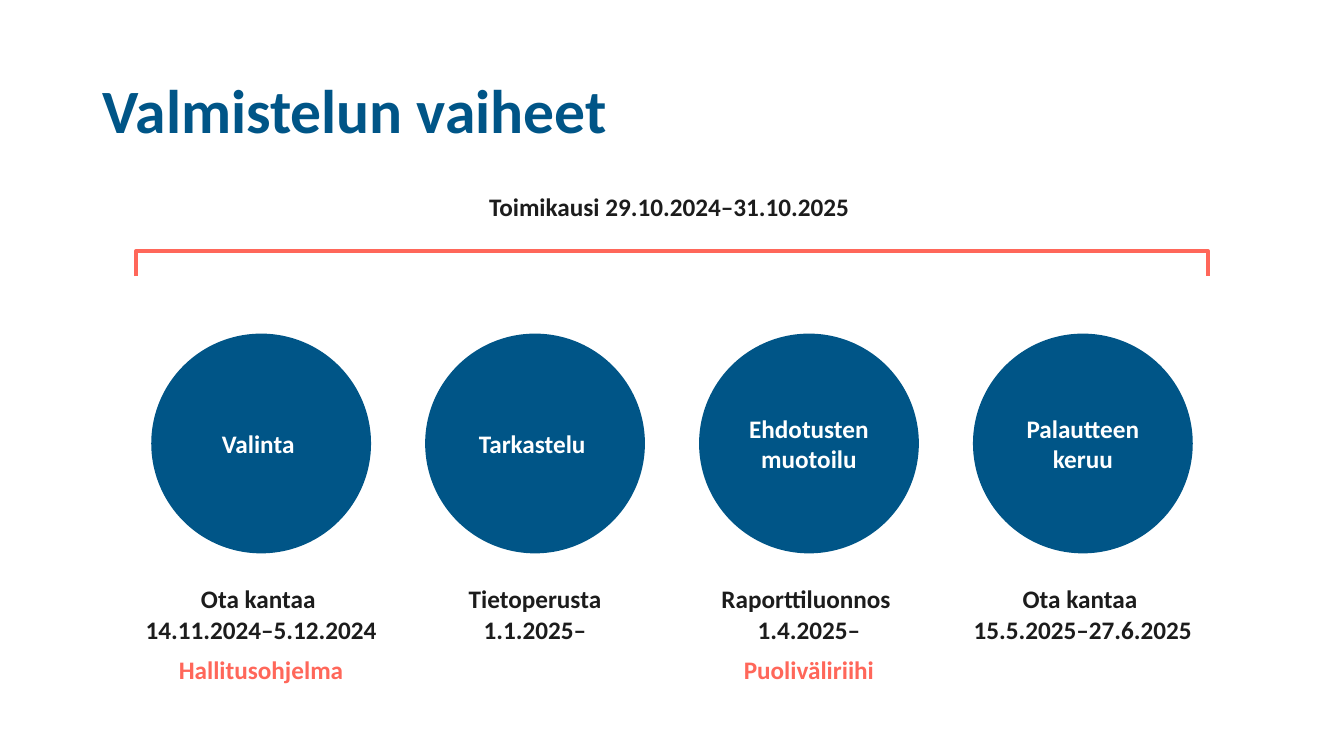
from dataclasses import dataclass

import pptx
import pptx.dml.color
import pptx.enum.shapes
import pptx.enum.text
import pptx.shapes.autoshape
import pptx.slide
import pptx.util

Inches = pptx.util.Inches
RGBColor = pptx.dml.color.RGBColor
Align = pptx.enum.text.PP_ALIGN
Anchor = pptx.enum.text.MSO_ANCHOR

BLUE = RGBColor(0x00, 0x55, 0x87)
CORAL = RGBColor(0xFF, 0x67, 0x5A)
INK = RGBColor(0x1C, 0x1C, 0x1C)
WHITE = RGBColor(0xFF, 0xFF, 0xFF)
FONT = "Calibri"

CIRCLE_LEFT = 1.5
CIRCLE_TOP = 3.31
CIRCLE_SIZE = 2.18
CIRCLE_PITCH = 8.15 / 3
CAPTION_WIDTH = 2.93
CAPTION_TOP = 5.74
MILESTONE_TOP = 6.44


@dataclass(frozen=True)
class Phase:
    name: str
    caption: tuple[str, ...]
    milestone: str = ""


@dataclass(frozen=True)
class Style:
    color: RGBColor
    size: float = 18
    align: Align = Align.CENTER


PHASES = (
    Phase("Valinta ", ("Ota kantaa ", "14.11.2024–5.12.2024"), "Hallitusohjelma"),
    Phase("Tarkastelu ", ("Tietoperusta", "1.1.2025–")),
    Phase("Ehdotusten muotoilu", ("Raporttiluonnos ", "1.4.2025–"), "Puoliväliriihi"),
    Phase("Palautteen keruu", ("Ota kantaa ", "15.5.2025–27.6.2025")),
)


def write(shape: pptx.shapes.autoshape.Shape, lines: tuple[str, ...], style: Style) -> None:
    frame = shape.text_frame
    frame.word_wrap = True
    for number, line in enumerate(lines):
        para = frame.add_paragraph() if number else frame.paragraphs[0]
        para.alignment = style.align
        span = para.add_run()
        span.text = line
        span.font.name = FONT
        span.font.size = pptx.util.Pt(style.size)
        span.font.bold = True
        span.font.color.rgb = style.color


def add_text(
    page: pptx.slide.Slide, left: float, top: float, width: float, height: float,
    lines: tuple[str, ...], style: Style,
) -> pptx.shapes.autoshape.Shape:
    box = page.shapes.add_textbox(Inches(left), Inches(top), Inches(width), Inches(height))
    write(box, lines, style)
    return box


def add_phase(page: pptx.slide.Slide, phase: Phase, left: float) -> None:
    circle = page.shapes.add_shape(
        pptx.enum.shapes.MSO_SHAPE.FLOWCHART_CONNECTOR,
        Inches(left), Inches(CIRCLE_TOP), Inches(CIRCLE_SIZE), Inches(CIRCLE_SIZE),
    )
    circle.shadow.inherit = False
    circle.fill.solid()
    circle.fill.fore_color.rgb = BLUE
    circle.line.fill.background()
    circle.text_frame.vertical_anchor = Anchor.MIDDLE
    write(circle, (phase.name,), Style(WHITE))

    caption_left = left + (CIRCLE_SIZE - CAPTION_WIDTH) / 2
    add_text(page, caption_left, CAPTION_TOP, CAPTION_WIDTH, 0.71, phase.caption, Style(INK))
    if phase.milestone:
        add_text(page, caption_left, MILESTONE_TOP, CAPTION_WIDTH, 0.4,
                 (phase.milestone,), Style(CORAL))


def add_bracket(page: pptx.slide.Slide) -> None:
    left, right, top, bottom = Inches(1.35), Inches(11.98), Inches(2.49), Inches(2.74)
    builder = page.shapes.build_freeform(left, bottom)
    builder.add_line_segments([(left, top), (right, top), (right, bottom)], close=False)
    bracket = builder.convert_to_shape()
    bracket.shadow.inherit = False
    bracket.fill.background()
    bracket.line.color.rgb = CORAL
    bracket.line.width = pptx.util.Pt(3)


def main() -> None:
    deck = pptx.Presentation()
    deck.slide_width = Inches(13.33)
    deck.slide_height = Inches(7.5)
    page = deck.slides.add_slide(deck.slide_layouts[6])

    title = add_text(page, 0.92, 0.4, 11.5, 1.45, ("Valmistelun vaiheet",),
                     Style(BLUE, 44, Align.LEFT))
    title.text_frame.vertical_anchor = Anchor.MIDDLE
    title.text_frame.paragraphs[0].line_spacing = 0.9

    add_text(page, 2.59, 1.85, 8.15, 0.4, ("Toimikausi 29.10.2024–31.10.2025 ",), Style(INK))
    add_bracket(page)
    for number, phase in enumerate(PHASES):
        add_phase(page, phase, CIRCLE_LEFT + number * CIRCLE_PITCH)

    deck.save("out.pptx")


if __name__ == "__main__":
    main()
